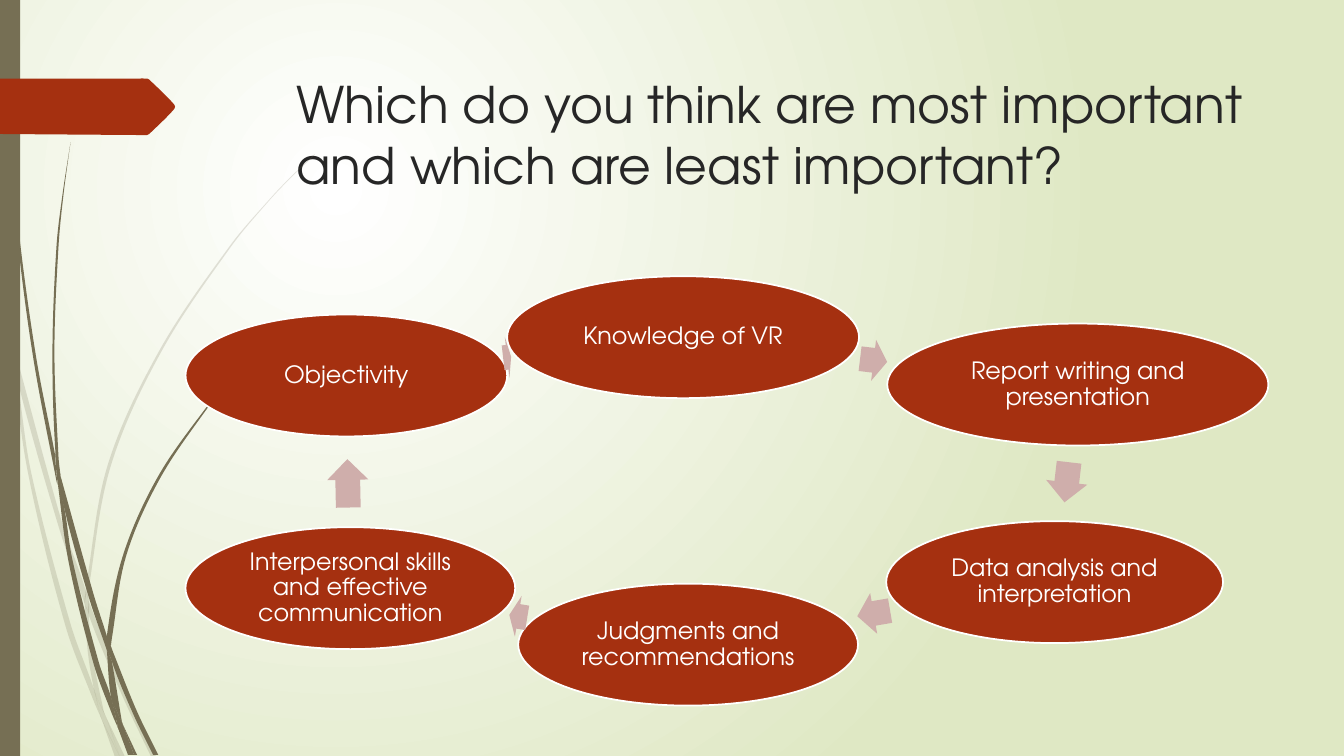
import math
from lxml import etree
from pptx import Presentation
from pptx import util as u
from pptx.dml.color import RGBColor
from pptx.enum import shapes, text
from pptx.oxml.ns import qn

PX = u.Inches(1) // 100
FONT = "TeX Gyre Adventor"
RUST = RGBColor(0xA5, 0x30, 0x10)
OLIVE = RGBColor(0x76, 0x6F, 0x54)
PINK = RGBColor(0xCF, 0xAE, 0xAB)
INK = RGBColor(0x26, 0x26, 0x26)
WHITE = RGBColor(0xFF, 0xFF, 0xFF)
LEAF = RGBColor(0xDF, 0xE8, 0xC4)

TITLE = "Which do you think are most important and which are least important?"
OVAL_H, ARROW_H = 121, 41
SKILLS = [
    ("Knowledge of VR", 503, 274, 349),
    ("Report writing and presentation", 880, 321, 378),
    ("Data analysis and interpretation", 879, 517, 334),
    ("Judgments and recommendations", 514, 579, 337),
    ("Interpersonal skills and effective communication", 184, 523, 327),
    ("Objectivity", 184, 312, 319),
]
ARROWS = [
    (853, 337, 27, 6.9),
    (1038, 458, 40, 96.6),
    (850, 588, 33, 170.3),
    (505, 591, 18, 189.4),
    (321, 459, 48, 268.9),
    (499, 334, 8, 353.5),
]
FLAG = [(173, 108), (148, 133), (146, 134), (136, 134), (0, 133), (0, 78),
        (136, 78), (146, 78), (148, 79), (173, 104)]
PALE_GRASS = [
    [(11, 350), (9, 322), (0, 282), (0, 299), (10, 344)],
    [(58, 522), (84, 599), (85, 586), (62, 520), (14, 345), (17, 376)],
    [(92, 607), (88, 596), (88, 610), (123, 694), (150, 751), (155, 751),
     (127, 692)],
    [(119, 751), (124, 751), (105, 711)],
    [(93, 683), (70, 619), (31, 469), (17, 376), (11, 350), (28, 470),
     (65, 621), (92, 693), (101, 714), (99, 707)],
    [(84, 599), (87, 646), (93, 683), (96, 692), (105, 711), (103, 706),
     (91, 646), (88, 610), (88, 608)],
    [(88, 584), (110, 462), (160, 349), (229, 245), (268, 198), (290, 175),
     (312, 154), (312, 153), (289, 175), (268, 197), (228, 244), (158, 348),
     (107, 461), (85, 584), (85, 586), (88, 596)],
    [(101, 714), (114, 751), (119, 751)],
    [(88, 608), (88, 610), (88, 596), (85, 586), (84, 599)],
    [(96, 692), (93, 683), (99, 707), (101, 714), (119, 751), (105, 711)],
]
DARK_GRASS = [
    [(7, 110), (17, 233), (33, 355), (56, 477), (57, 481), (55, 457),
     (55, 453), (36, 355), (19, 232), (8, 109), (5, 48), (4, 0), (3, 0),
     (4, 48)],
    [(88, 592), (106, 645), (106, 633), (106, 631), (93, 590), (60, 472),
     (64, 505)],
    [(113, 649), (110, 641), (111, 656), (132, 708), (152, 749), (157, 749),
     (136, 706)],
    [(110, 691), (98, 657), (72, 556), (64, 505), (57, 477), (68, 557),
     (93, 659), (111, 708), (117, 722), (116, 717)],
    [(60, 472), (58, 453), (54, 349), (58, 245), (63, 193), (70, 141),
     (62, 193), (56, 245), (52, 349), (55, 449)],
    [(133, 749), (136, 749), (122, 719)],
    [(57, 477), (64, 505), (60, 472), (55, 449), (55, 453)],
    [(111, 633), (125, 552), (158, 476), (205, 406), (231, 374), (245, 359),
     (261, 344), (260, 344), (245, 358), (231, 373), (204, 405), (156, 474),
     (122, 551), (106, 631), (110, 641)],
    [(117, 722), (127, 749), (131, 749)],
    [(106, 645), (110, 691), (116, 706), (122, 719), (121, 716), (111, 656),
     (109, 651)],
    [(106, 645), (109, 651), (111, 656), (110, 641), (106, 631), (106, 633)],
    [(116, 706), (110, 691), (116, 717), (117, 722), (130, 749), (133, 749),
     (122, 719)],
]


def paint(sp, color, line=None):
    sp.shadow.inherit = False
    sp.fill.solid()
    sp.fill.fore_color.rgb = color
    if line is None:
        sp.line.fill.background()
    else:
        sp.line.color.rgb = line
        sp.line.width = u.Pt(1.25)


def add_preset(s, kind, x, y, w, h, color, line=None):
    sp = s.shapes.add_shape(kind, x * PX, y * PX, w * PX, h * PX)
    paint(sp, color, line)
    return sp


def handle(before, at, after, toward):
    way_in = math.atan2(at[1] - before[1], at[0] - before[0])
    way_out = math.atan2(after[1] - at[1], after[0] - at[0])
    corner = math.cos(way_out - way_in) < 0.7
    reach = math.dist(at, toward) / 3
    angle = math.atan2(after[1] - before[1], after[0] - before[0])
    if corner:
        angle = math.atan2(toward[1] - at[1], toward[0] - at[0])
    elif toward == before:
        angle += math.pi
    return at[0] + reach * math.cos(angle), at[1] + reach * math.sin(angle)


def add_outline(s, anchors, color, alpha=None):
    knots = [(x * PX, y * PX) for x, y in anchors]
    builder = s.shapes.build_freeform(*knots[0], scale=1)
    builder.add_line_segments(knots[1:] + knots[:1], close=True)
    sp = builder.convert_to_shape()
    paint(sp, color)
    lines = list(sp._element.iter(qn("a:lnTo")))
    n = len(knots)
    for i, line in enumerate(lines):
        a, b, c, d = (knots[(i + k) % n] for k in (-1, 0, 1, 2))
        line.tag = qn("a:cubicBezTo")
        controls = handle(a, b, c, c), handle(b, c, d, b)
        for k, (x, y) in enumerate(controls):
            line.insert(k, etree.Element(
                qn("a:pt"), x=str(round(x - sp.left)), y=str(round(y - sp.top))))
    if alpha:
        fill = sp._element.spPr.find(qn("a:solidFill"))
        etree.SubElement(fill[0], qn("a:alpha"), val=str(alpha * 1000))


def style(p, size, color):
    font = p.runs[0].font
    font.name, font.size, font.color.rgb = FONT, u.Pt(size), color


def set_background(s):
    fill = s.background.fill
    fill.gradient()
    for stop, color, position in zip(fill.gradient_stops, (WHITE, LEAF), (0, 1)):
        stop.color.rgb = color
        stop.position = position
    grad = s.background._cSld.find(".//" + qn("a:gradFill"))
    grad.remove(grad.find(qn("a:lin")))
    radial = etree.Element(qn("a:path"), path="circle")
    etree.SubElement(radial, qn("a:fillToRect"),
                     l="50000", t="50000", r="100000", b="100000")
    grad.find(qn("a:gsLst")).addnext(radial)


def add_title(s):
    title = s.shapes.title
    title.left, title.top, title.width, title.height = (
        v * PX for v in (284, 68, 975, 140))
    tf = title.text_frame
    tf.text = TITLE
    tf.word_wrap = True
    tf.auto_size = text.MSO_AUTO_SIZE.NONE
    tf.vertical_anchor = text.MSO_ANCHOR.TOP
    p = tf.paragraphs[0]
    p.alignment = text.PP_ALIGN.LEFT
    style(p, 36, INK)


def add_skill(s, label, x, y, w):
    oval = add_preset(s, shapes.MSO_SHAPE.OVAL, x, y, w, OVAL_H, RUST, WHITE)
    tf = oval.text_frame
    tf.text = label
    tf.word_wrap = True
    tf.vertical_anchor = text.MSO_ANCHOR.MIDDLE
    tf.margin_left = tf.margin_right = tf.margin_top = tf.margin_bottom = 2 * PX
    p = tf.paragraphs[0]
    p.alignment = text.PP_ALIGN.CENTER
    p.line_spacing = 0.9
    style(p, 17, WHITE)


def add_arrow(s, x, y, w, angle):
    arrow = add_preset(s, shapes.MSO_SHAPE.RIGHT_ARROW, x, y, w, ARROW_H, PINK)
    arrow.adjustments[0], arrow.adjustments[1] = 0.6, 0.5
    arrow.rotation = angle


prs = Presentation()
prs.slide_width, prs.slide_height = 1333 * PX, 750 * PX
s = prs.slides.add_slide(prs.slide_layouts[5])
set_background(s)
for anchors in PALE_GRASS:
    add_outline(s, anchors, OLIVE, 20)
for anchors in DARK_GRASS:
    add_outline(s, anchors, OLIVE)
add_preset(s, shapes.MSO_SHAPE.RECTANGLE, 0, 0, 20, 750, OLIVE)
add_outline(s, FLAG, RUST)
add_title(s)
for skill, arrow in zip(SKILLS, ARROWS):
    add_skill(s, *skill)
    add_arrow(s, *arrow)
prs.save("out.pptx")
